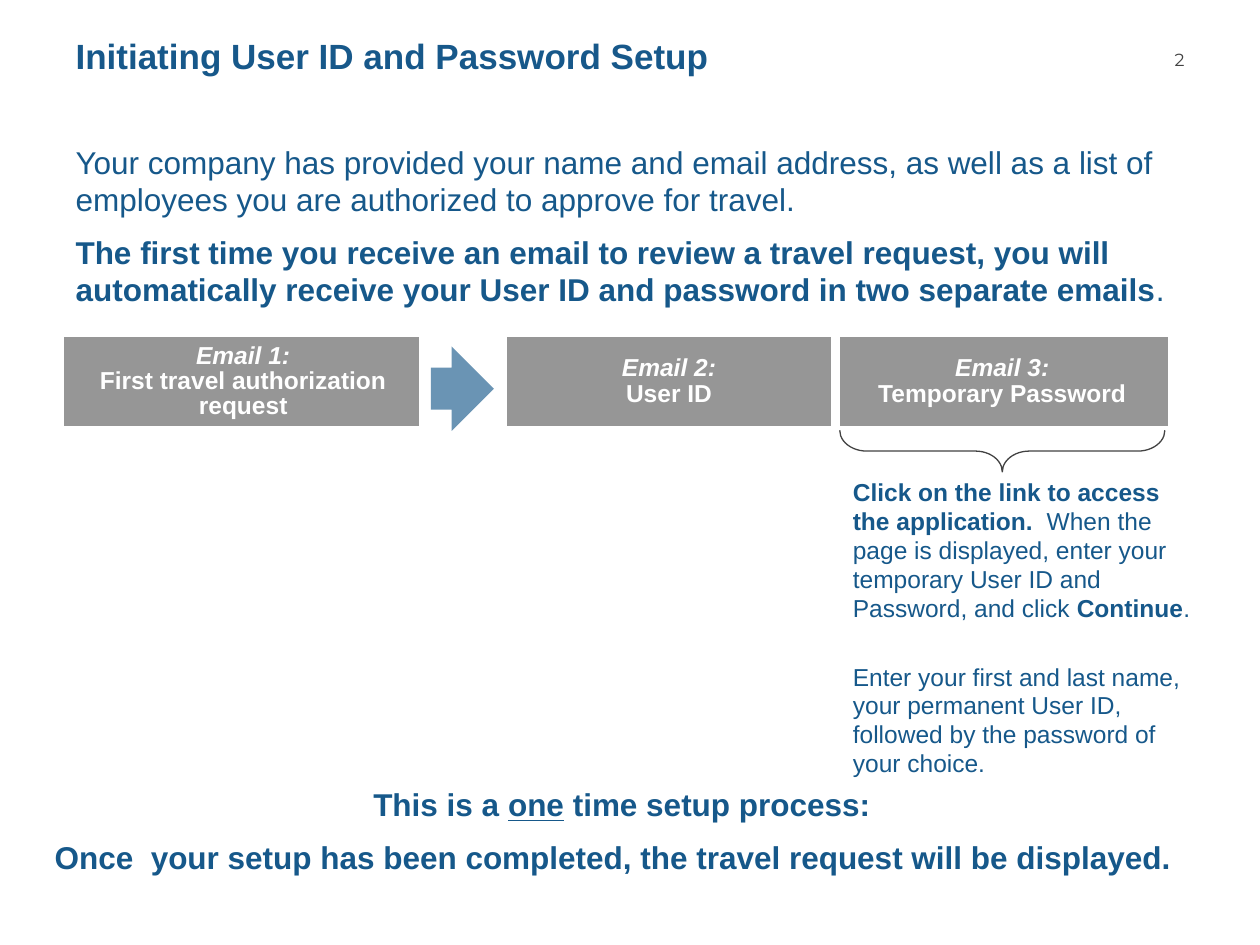
"""Build the slide on initiating User ID and password setup."""
from lxml.etree import SubElement as Sub
from pptx import Presentation as Deck
from pptx.dml.color import RGBColor as Rgb
from pptx.enum.shapes import MSO_SHAPE as Kind
from pptx.enum.text import MSO_ANCHOR as Anchor
from pptx.enum.text import MSO_AUTO_SIZE as Fit
from pptx.enum.text import PP_ALIGN as Align
from pptx.oxml.ns import qn
from pptx.util import Inches, Pt

HUES = {
    "text": "16588A", "title": "17588A", "cell": "969696",
    "arrow": "6A94B4", "dark": "424242", "white": "FFFFFF",
}
BOLD = {"bold": True}
BODY = [
    [("Your company has provided your name and email address, as well as a "
      "list of employees you are authorized to approve for travel.", {})],
    [("The first time you receive an email to review a travel request, you "
      "will automatically receive your User ID and password in two separate "
      "emails", BOLD), (".", {})],
]
STEPS = [
    [("Click on the link to access the application.", BOLD),
     ("  When the page is displayed, enter your temporary User ID and "
      "Password, and click ", {}), ("Continue", BOLD), (".", {})],
    [("Enter your first and last name, your permanent User ID, followed by "
      "the password of your choice.", {})],
]
CLOSE = [
    [("This is a ", BOLD), ("one", {"bold": True, "underline": True}),
     (" time setup process:", BOLD)],
    [("Once  your setup has been completed, the travel request will be "
      "displayed.", BOLD)],
]
MAILS = {
    0: ("Email 1:", "First travel authorization request"),
    2: ("Email 2:", "User ID"),
    3: ("Email 3:", "Temporary Password"),
}
COLS = (2.86, 0.63, 2.64, 2.65)


def tint(name):
    """Return the named colour."""
    return Rgb.from_string(HUES[name])


def put(item, form):
    """Set each attribute of item from a dict."""
    for key, val in form.items():
        setattr(item, key, val)


def place(item, area):
    """Move and size an item in inches."""
    put(item, dict(zip(("left", "top", "width", "height"), map(Inches, area))))


def write(frame, paras, size, hue="text", face="Arial", gap=0,
          line=0.98, align=Align.LEFT):
    """Write paragraphs of (text, format) runs without bullets."""
    put(frame, {"word_wrap": True, "auto_size": Fit.NONE})
    for num, runs in enumerate(paras):
        para = frame.add_paragraph() if num else frame.paragraphs[0]
        props = para._p.get_or_add_pPr()
        put_off = {"marL": "0", "indent": "0"}
        for key, val in put_off.items():
            props.set(key, val)
        Sub(props, qn("a:buNone"))
        put(para, {"alignment": align, "line_spacing": line,
                   "space_before": Pt(gap if num else 0)})
        for text, form in runs:
            run = para.add_run()
            run.text = text
            put(run.font, {"name": face, "size": Pt(size), "bold": False} | form)
            run.font.color.rgb = tint(hue)


def add_text(slide, area, paras, size, **form):
    """Add a text box and return its frame."""
    frame = slide.shapes.add_textbox(*map(Inches, area)).text_frame
    write(frame, paras, size, **form)
    return frame


def add_shape(slide, kind, area, turns):
    """Add a preset shape with its adjustments."""
    shape = slide.shapes.add_shape(kind, *map(Inches, area))
    shape.shadow.inherit = False
    for num, val in enumerate(turns):
        shape.adjustments[num] = val
    return shape


def edge(cell, side):
    """Draw a thick white border on one side of a cell."""
    line = Sub(cell._tc.get_or_add_tcPr(), qn("a:" + side), w=str(Pt(6)))
    fill = Sub(line, qn("a:solidFill"))
    Sub(fill, qn("a:srgbClr"), val=HUES["white"])


def add_mails(slide):
    """Add the row of emails as a table."""
    area = (0.5, 2.67, sum(COLS), 0.72)
    table = slide.shapes.add_table(1, len(COLS), *map(Inches, area)).table
    put(table, {"first_row": False, "horz_banding": False})
    for num, wide in enumerate(COLS):
        table.columns[num].width = Inches(wide)
        cell = table.cell(0, num)
        if num:
            edge(cell, "lnL")
        if num < len(COLS) - 1:
            edge(cell, "lnR")
        if num not in MAILS:
            cell.fill.background()
            continue
        cell.fill.solid()
        cell.fill.fore_color.rgb = tint("cell")
        cell.vertical_anchor = Anchor.MIDDLE
        head, name = MAILS[num]
        paras = [[(head, {"bold": True, "italic": True})], [(name, BOLD)]]
        write(cell.text_frame, paras, 14, hue="white", line=0.92,
              align=Align.CENTER)


def add_marks(slide):
    """Add the arrow and the brace."""
    arrow = add_shape(slide, Kind.RIGHT_ARROW, (3.42, 2.75, 0.5, 0.67),
                      (0.5, 0.67))
    arrow.fill.solid()
    arrow.fill.fore_color.rgb = tint("arrow")
    arrow.line.fill.background()
    brace = add_shape(slide, Kind.LEFT_BRACE, (7.79, 2.29, 0.33, 2.58),
                      (0.65, 0.5))
    brace.rotation = 270
    brace.fill.background()
    brace.line.color.rgb = tint("dark")
    brace.line.width = Pt(0.75)


def main():
    """Build and save the deck."""
    deck = Deck()
    put(deck, {"slide_width": Inches(10), "slide_height": Inches(7.5)})
    slide = deck.slides.add_slide(deck.slide_layouts[1])
    title, body = slide.placeholders
    place(title, (0.5, 0, 8.17, 0.92))
    title.text_frame.vertical_anchor = Anchor.MIDDLE
    write(title.text_frame, [[("Initiating User ID and Password Setup", BOLD)]],
          20, hue="title", line=0.88)
    place(body, (0.5, 1.1, 8.92, 1.82))
    write(body.text_frame, BODY, 18, gap=9)
    add_text(slide, (9.14, 0.34, 0.36, 0.25), [[("2", {})]], 10, hue="dark",
             face="Montserrat", line=1, align=Align.RIGHT)
    add_mails(slide)
    add_text(slide, (6.67, 3.75, 2.92, 1.4), STEPS, 14, gap=23)
    add_marks(slide)
    close = add_text(slide, (0.29, 6.2, 9.29, 0.83), CLOSE, 18, gap=9,
                     align=Align.CENTER)
    put(close, {"margin_left": Inches(0.05), "margin_right": Inches(0.05)})
    close.paragraphs[1]._p.pPr.set("marR", str(Inches(0.14)))
    deck.save("out.pptx")


if __name__ == "__main__":
    main()
